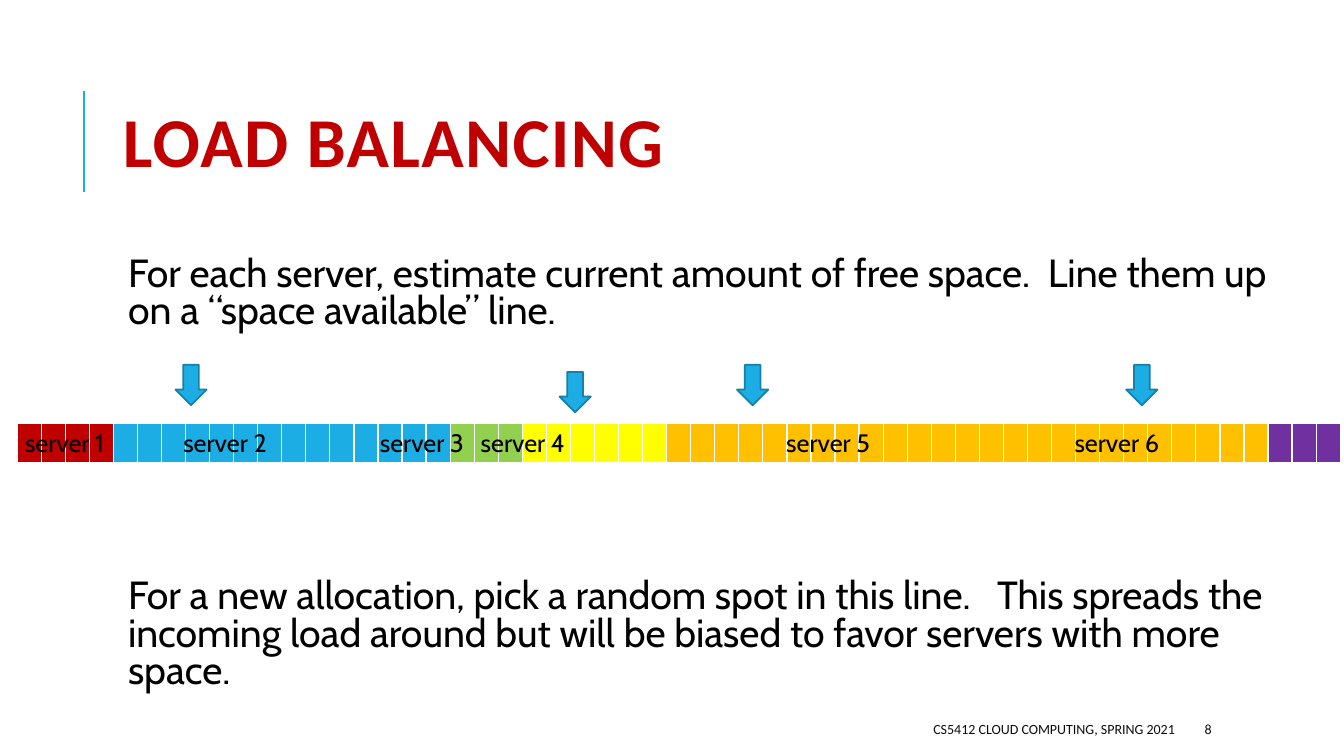
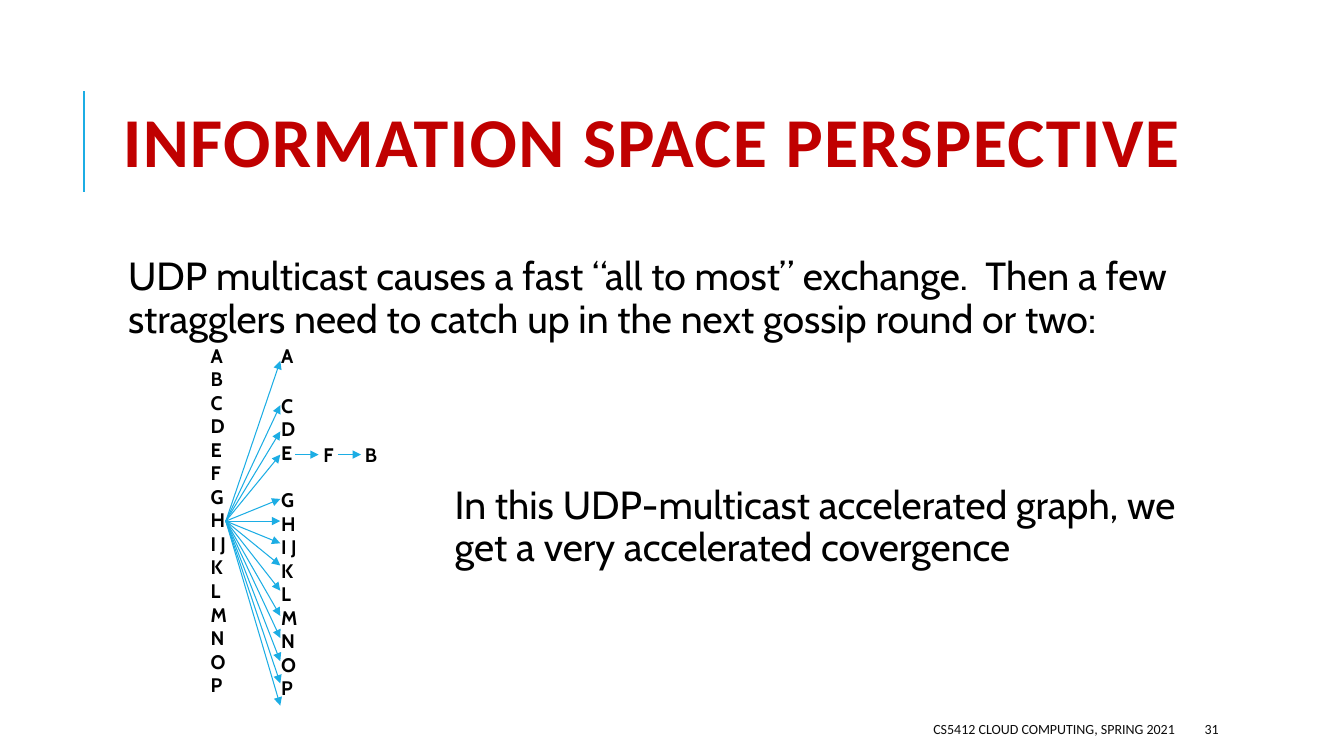
"""Build two lecture slides on load balancing and multicast."""
from lxml import etree
from pptx import Presentation
from pptx import util as u
from pptx.dml.color import RGBColor
from pptx.enum import shapes, text
from pptx.oxml.ns import qn

BLUE, RED, BLACK, WHITE = "1CADE4", "C00000", "000000", "FFFFFF"
EDGE, GREY = "1580A9", "0D0D0D"
HEAD, BODY = "Calibri", "Cabin"
FOOT = "CS5412 CLOUD COMPUTING, SPRING 2021"

SPACE = [(RED, 4), (BLUE, 14), ("92D050", 3), ("FFFF00", 6),
         ("FFC000", 25), ("7030A0", 3)]
LABELS = [0.15, 1.72, 3.67, 4.67, 7.7, 10.56]
PICKS = [(1.74, 3.62), (5.55, 3.69), (7.31, 3.62), (11.17, 3.62)]

SENT = ["A B C D E F G H IJ K L M N O P"]
HEARD = ["A", "C D E", "G H IJ K L M N O P"]
TIPS = [3.58, 4.02, 4.28, 4.51, 4.95, 5.17, 5.39, 5.61, 5.86, 6.11,
        6.33, 6.56, 6.78, 7]


def paint(part, code):
    """Give a fill or line a solid colour."""
    part.solid()
    part.fore_color.rgb = RGBColor.from_string(code)


def write(slide, box, words, size, font=BODY, color=BLACK, bold=False,
          wrap=True, anchor=text.MSO_ANCHOR.TOP, align=text.PP_ALIGN.LEFT):
    """Add a text box and return its text frame."""
    frame = slide.shapes.add_textbox(*map(u.Inches, box)).text_frame
    frame.text = words
    frame.word_wrap = wrap
    frame.vertical_anchor = anchor
    for para in frame.paragraphs:
        para.alignment = align
        for run in para.runs:
            run.font.size = u.Pt(size)
            run.font.name = font
            run.font.bold = bold
            run.font.color.rgb = RGBColor.from_string(color)
    return frame


def link(slide, start, end, width, arrow=False):
    """Draw a straight blue line, with an arrowhead if asked."""
    line = slide.shapes.add_connector(
        shapes.MSO_CONNECTOR.STRAIGHT, *map(u.Inches, (*start, *end)))
    paint(line.line.fill, BLUE)
    line.line.width = u.Pt(width)
    props = line.element.spPr
    if arrow:
        etree.SubElement(props.find(qn("a:ln")), qn("a:tailEnd"),
                         type="triangle")
    etree.SubElement(props, qn("a:effectLst"))


def base(deck, title, number):
    """Add a slide with its title, rule and footer."""
    slide = deck.slides.add_slide(deck.slide_layouts[6])
    link(slide, (0.83, 1.9), (0.83, 0.9), 1.5)
    mid = text.MSO_ANCHOR.MIDDLE
    frame = write(slide, (1.12, 0.64, 11.8, 1.64), title, 50, HEAD, RED,
                  True, anchor=mid)
    para = frame.paragraphs[0]
    para.line_spacing = 0.8
    para.runs[0].font._element.set("spc", "100")
    write(slide, (5.3, 7.08, 6.45, 0.3), FOOT, 10, HEAD, GREY, anchor=mid,
          align=text.PP_ALIGN.RIGHT)
    write(slide, (11.85, 7.08, 1.06, 0.3), str(number), 10, HEAD, GREY,
          anchor=mid)
    return slide


def body(slide, box, words, pitch):
    """Add a paragraph of body text."""
    frame = write(slide, box, words, 28)
    frame.margin_left = u.Inches(0.15)
    frame.margin_top = frame.margin_right = u.Inches(0.05)
    para = frame.paragraphs[0]
    para.line_spacing = pitch
    para.space_before = u.Pt(12)


def border(cell):
    """Give a cell white edges, thicker at the bottom."""
    props = cell._tc.get_or_add_tcPr()
    for side, width in zip("LRTB", (1, 1, 1, 3)):
        line = etree.SubElement(props, qn("a:ln" + side),
                                w=str(u.Pt(width)))
        fill = etree.SubElement(line, qn("a:solidFill"))
        etree.SubElement(fill, qn("a:srgbClr"), val=WHITE)


def strip(slide, box):
    """Draw the line of free space as a one-row table."""
    fills = [code for code, count in SPACE for _ in range(count)]
    table = slide.shapes.add_table(
        1, len(fills), *map(u.Inches, box)).table
    for col, code in enumerate(fills):
        table.columns[col].width = u.Inches(box[2] / len(fills))
        cell = table.cell(0, col)
        cell.margin_left = cell.margin_right = 0
        border(cell)
        paint(cell.fill, code)
    for num, left in enumerate(LABELS, 1):
        write(slide, (left, box[1] - 0.01, 1.1, 0.4), f"server {num}", 18,
              wrap=False)


def pick(slide, left, top):
    """Add a block arrow that points at a random spot."""
    mark = slide.shapes.add_shape(
        shapes.MSO_SHAPE.DOWN_ARROW,
        *map(u.Inches, (left, top, 0.31, 0.4)))
    mark.shadow.inherit = False
    paint(mark.fill, BLUE)
    paint(mark.line.fill, EDGE)
    mark.line.width = u.Pt(1.25)


def column(slide, left, top, groups, gaps=()):
    """Stack node letters, with a gap before each later group."""
    rows = [row.split() for row in groups]
    words = "\n".join(" ".join(name) for row in rows for name in row)
    frame = write(slide, (left, top, 0.36, 3.87), words, 14, bold=True,
                  wrap=False)
    first = 0
    for row, gap in zip(rows, gaps):
        first += len(row)
        frame.paragraphs[first].space_before = u.Pt(gap)


def graph(slide, left, top):
    """Draw the multicast fan and the gossip steps after it."""
    column(slide, left, top, SENT)
    column(slide, left + 0.7, top, HEARD, (19, 17))
    for tip in TIPS:
        link(slide, (left + 0.25, top + 1.81),
             (left + 0.79, top + tip - 3.36), 0.75, True)
    for name, shift in (("F", 1.12), ("B", 1.53)):
        write(slide, (left + shift, top + 0.98, 0.36, 0.34), name, 14,
              bold=True, wrap=False)
    for shift in (0.94, 1.36):
        link(slide, (left + shift, top + 1.15),
             (left + shift + 0.23, top + 1.15), 0.75, True)


def balance(deck):
    """Build the load balancing slide."""
    slide = base(deck, "LOAD BALANCING", 8)
    body(slide, (1.12, 2.5, 11.8, 1),
         "For each server, estimate current amount of free space.  "
         "Line them up on a “space available” line.", 0.8)
    body(slide, (1.12, 5.7, 11.8, 1.3),
         "For a new allocation, pick a random spot in this line.   "
         "This spreads the incoming load around but will be biased to "
         "favor servers with more space.", 0.8)
    strip(slide, (0.17, 4.2, 13.14, 0.4))
    for left, top in PICKS:
        pick(slide, left, top)


def gossip(deck):
    """Build the information space slide."""
    slide = base(deck, "INFORMATION SPACE PERSPECTIVE", 31)
    body(slide, (1.12, 2.5, 11.8, 1),
         "UDP multicast causes a fast “all to most” exchange.  Then a few "
         "stragglers need to catch up in the next gossip round or two:", 0.9)
    body(slide, (4.36, 4.77, 7.5, 1),
         "In this UDP-multicast accelerated graph, we get a very "
         "accelerated covergence", 0.9)
    graph(slide, 1.99, 3.36)


def main():
    """Build and save the deck."""
    deck = Presentation()
    deck.slide_width, deck.slide_height = u.Inches(13.33), u.Inches(7.5)
    balance(deck)
    gossip(deck)
    deck.save("out.pptx")


if __name__ == "__main__":
    main()
